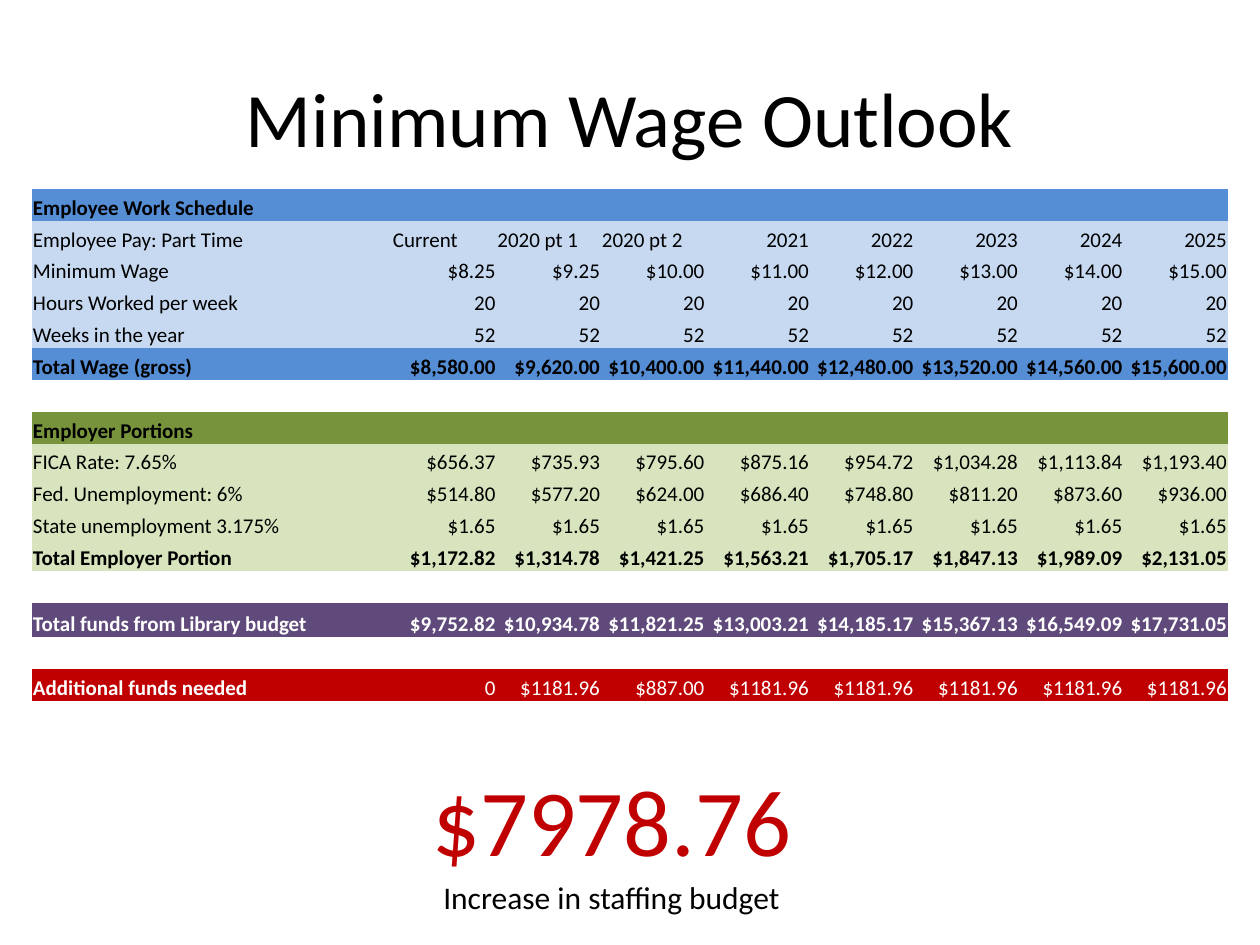
from dataclasses import dataclass

from lxml import etree
from pptx import Presentation
from pptx import util as u
from pptx.dml.color import RGBColor
from pptx.enum import text
from pptx.oxml import ns

PX_PER_INCH = 126
FONT = "Calibri"
BODY_SIZE = 12
YEARS = 8
NO_TABLE_STYLE = "{2D5ABB26-0587-4C30-8999-92F81FD0307C}"

BLACK = RGBColor(0x00, 0x00, 0x00)
WHITE = RGBColor(0xFF, 0xFF, 0xFF)
BLUE = RGBColor(0x55, 0x8E, 0xD5)
PALE_BLUE = RGBColor(0xC6, 0xD9, 0xF1)
GREEN = RGBColor(0x77, 0x93, 0x3C)
PALE_GREEN = RGBColor(0xD7, 0xE4, 0xBD)
PURPLE = RGBColor(0x60, 0x4A, 0x7B)
RED = RGBColor(0xC0, 0x00, 0x00)


@dataclass
class Row:
    label: str = ""
    values: tuple[str, ...] = ("",) * YEARS
    fill: RGBColor | None = None
    color: RGBColor = BLACK
    bold_label: bool = False
    bold_values: bool = False
    left_values: int = 0  # how many leading values are left-aligned


@dataclass
class Caption:
    words: str
    left: int
    top: int
    width: int
    height: int
    size: int
    color: RGBColor = BLACK
    align: text.PP_ALIGN = text.PP_ALIGN.LEFT
    anchor: text.MSO_ANCHOR = text.MSO_ANCHOR.TOP


def total(label: str, values: str, fill: RGBColor, color: RGBColor = BLACK) -> Row:
    return Row(label, tuple(values.split()), fill, color, True, True)


def detail(label: str, values: str, fill: RGBColor) -> Row:
    return Row(label, tuple(values.split()), fill)


ROWS = [
    # Employee wages
    Row("Employee Work Schedule", fill=BLUE, bold_label=True),
    Row("Employee Pay: Part Time",
        ("Current", "2020 pt 1", "2020 pt 2", "2021", "2022", "2023", "2024", "2025"),
        PALE_BLUE, left_values=3),
    detail("Minimum Wage",
           "$8.25 $9.25 $10.00 $11.00 $12.00 $13.00 $14.00 $15.00", PALE_BLUE),
    Row("Hours Worked per week", ("20",) * YEARS, PALE_BLUE),
    Row("Weeks in the year", ("52",) * YEARS, PALE_BLUE),
    total("Total Wage (gross)",
          "$8,580.00 $9,620.00 $10,400.00 $11,440.00 "
          "$12,480.00 $13,520.00 $14,560.00 $15,600.00", BLUE),
    Row(),
    # Employer costs
    Row("Employer Portions", fill=GREEN, bold_label=True),
    detail("FICA Rate: 7.65%",
           "$656.37 $735.93 $795.60 $875.16 $954.72 $1,034.28 $1,113.84 $1,193.40",
           PALE_GREEN),
    detail("Fed. Unemployment: 6%",
           "$514.80 $577.20 $624.00 $686.40 $748.80 $811.20 $873.60 $936.00",
           PALE_GREEN),
    Row("State unemployment 3.175%", ("$1.65",) * YEARS, PALE_GREEN),
    total("Total Employer Portion",
          "$1,172.82 $1,314.78 $1,421.25 $1,563.21 "
          "$1,705.17 $1,847.13 $1,989.09 $2,131.05", PALE_GREEN),
    Row(),
    # Budget totals
    total("Total funds from Library budget",
          "$9,752.82 $10,934.78 $11,821.25 $13,003.21 "
          "$14,185.17 $15,367.13 $16,549.09 $17,731.05", PURPLE, WHITE),
    Row(),
    Row("Additional funds needed",
        ("0", "$1181.96", "$887.00") + ("$1181.96",) * 5, RED, WHITE, bold_label=True),
]
BUDGET_ROW = 13

CAPTIONS = [
    Caption("Minimum Wage Outlook", 63, 38, 1134, 158, 44,
            align=text.PP_ALIGN.CENTER, anchor=text.MSO_ANCHOR.MIDDLE),
    Caption("$7978.76", 420, 756, 399, 127, 54, RED),
    Caption("Increase in staffing budget", 431, 872, 368, 50, 18),
]


def px(length: int) -> u.Emu:
    return u.Emu(round(length * u.Inches(1) / PX_PER_INCH))


def format_paragraph(para, size: int, color: RGBColor, bold: bool = False) -> None:
    for span in para.runs:
        span.font.name = FONT
        span.font.size = u.Pt(size)
        span.font.bold = bold
        span.font.color.rgb = color


def draw_caption(page, caption: Caption) -> None:
    box = page.shapes.add_textbox(px(caption.left), px(caption.top),
                                  px(caption.width), px(caption.height))
    frame = box.text_frame
    frame.word_wrap = True
    frame.vertical_anchor = caption.anchor
    frame.text = caption.words
    para = frame.paragraphs[0]
    para.alignment = caption.align
    format_paragraph(para, caption.size, caption.color)


def fill_cell(cell, words: str, row: Row, bold: bool, align: text.PP_ALIGN) -> None:
    cell.margin_left = cell.margin_right = cell.margin_top = px(1)
    cell.margin_bottom = 0
    cell.vertical_anchor = text.MSO_ANCHOR.BOTTOM
    if row.fill is None:
        cell.fill.background()
    else:
        cell.fill.solid()
        cell.fill.fore_color.rgb = row.fill
    para = cell.text_frame.paragraphs[0]
    para.alignment = align
    if words:
        para.text = words
        format_paragraph(para, BODY_SIZE, row.color, bold)
    else:
        # Keep empty cells from stretching their row
        etree.SubElement(para._p, ns.qn("a:endParaRPr"), sz=str(BODY_SIZE * 100))


def draw_table(page, rows: list[Row]) -> None:
    frame = page.shapes.add_table(len(rows), YEARS + 1,
                                  px(32), px(189), px(1196), px(512))
    table = frame.table
    table.first_row = table.horz_banding = False
    table._tbl.tblPr.find(ns.qn("a:tableStyleId")).text = NO_TABLE_STYLE

    # One wide label column, then equal year columns
    for index, column in enumerate(table.columns):
        column.width = px(836) // YEARS if index else px(360)
    for index, line in enumerate(table.rows):
        line.height = px(34) if index == BUDGET_ROW else px(478) // (len(rows) - 1)

    for r, row in enumerate(rows):
        fill_cell(table.cell(r, 0), row.label, row, row.bold_label, text.PP_ALIGN.LEFT)
        for c, value in enumerate(row.values):
            align = text.PP_ALIGN.LEFT if c < row.left_values else text.PP_ALIGN.RIGHT
            fill_cell(table.cell(r, c + 1), value, row, row.bold_values, align)


def main() -> None:
    deck = Presentation()
    deck.slide_width, deck.slide_height = px(1260), px(945)
    page = deck.slides.add_slide(deck.slide_layouts[6])
    draw_table(page, ROWS)
    for caption in CAPTIONS:
        draw_caption(page, caption)
    deck.save("out.pptx")


if __name__ == "__main__":
    main()
